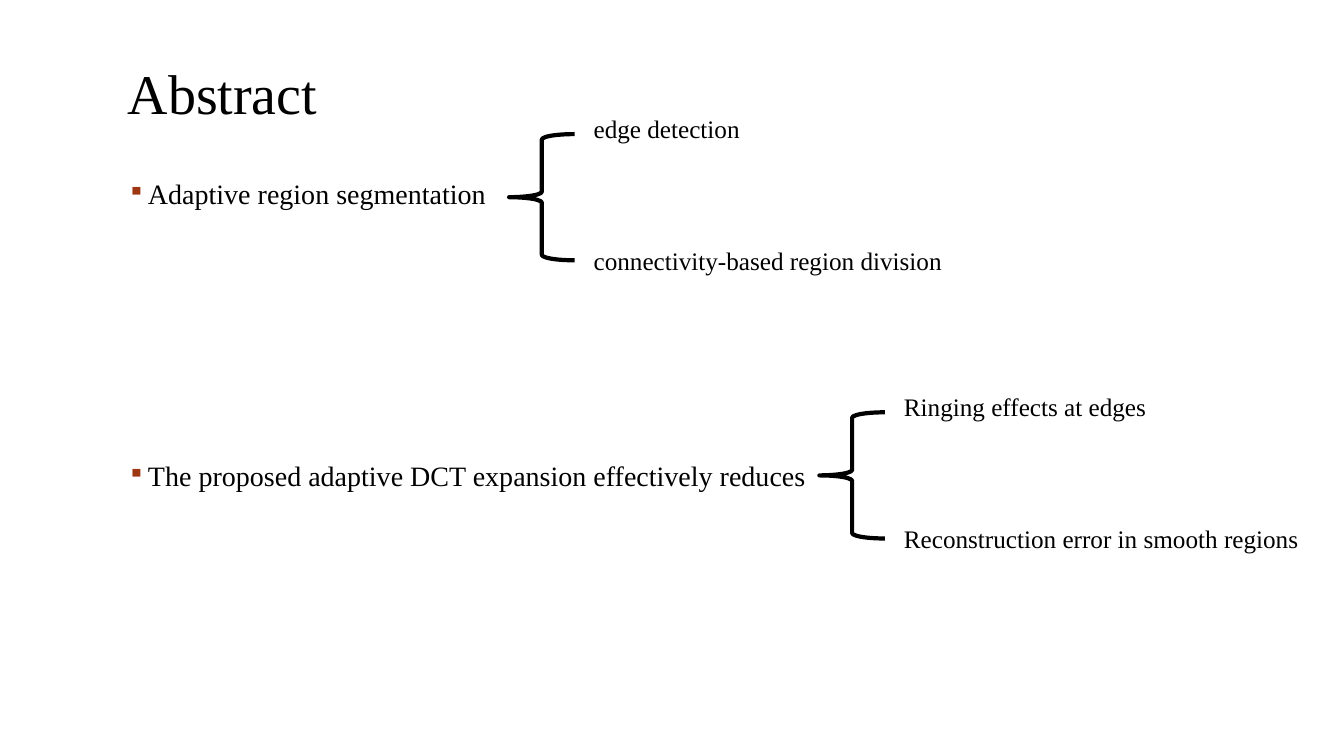
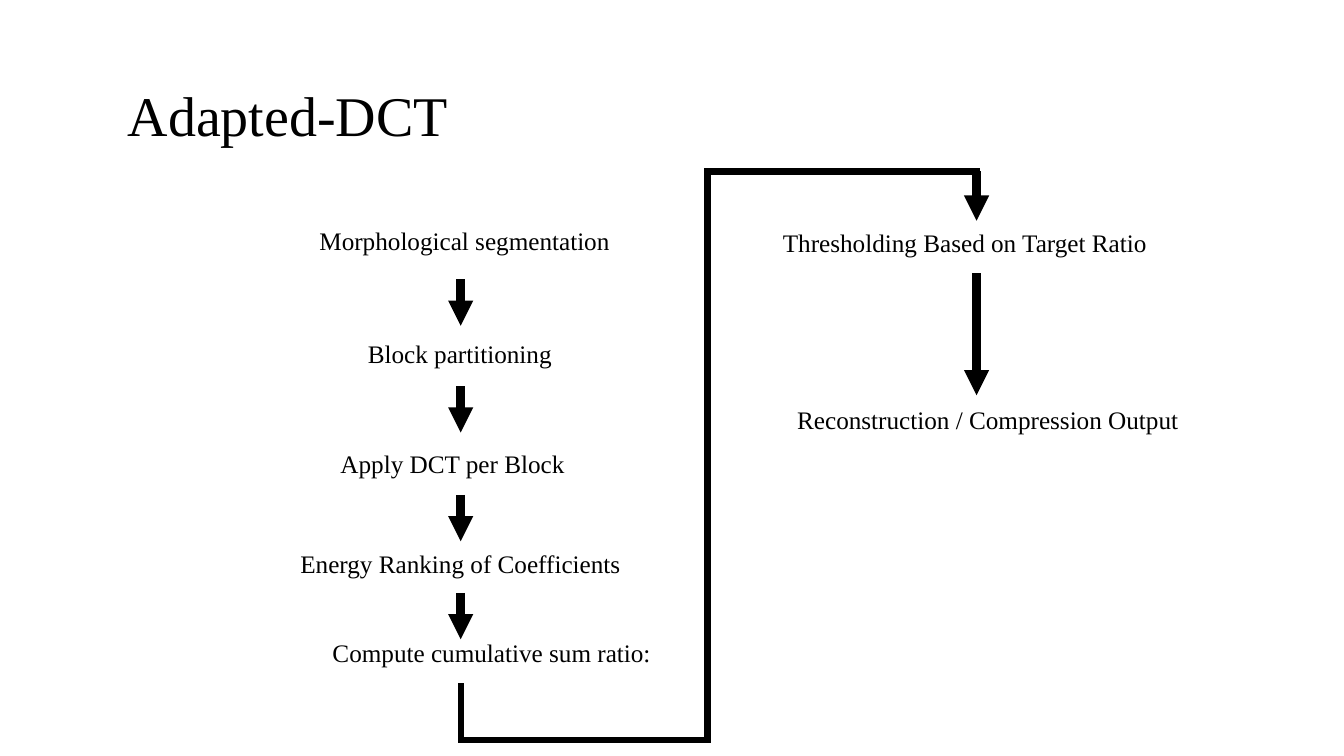
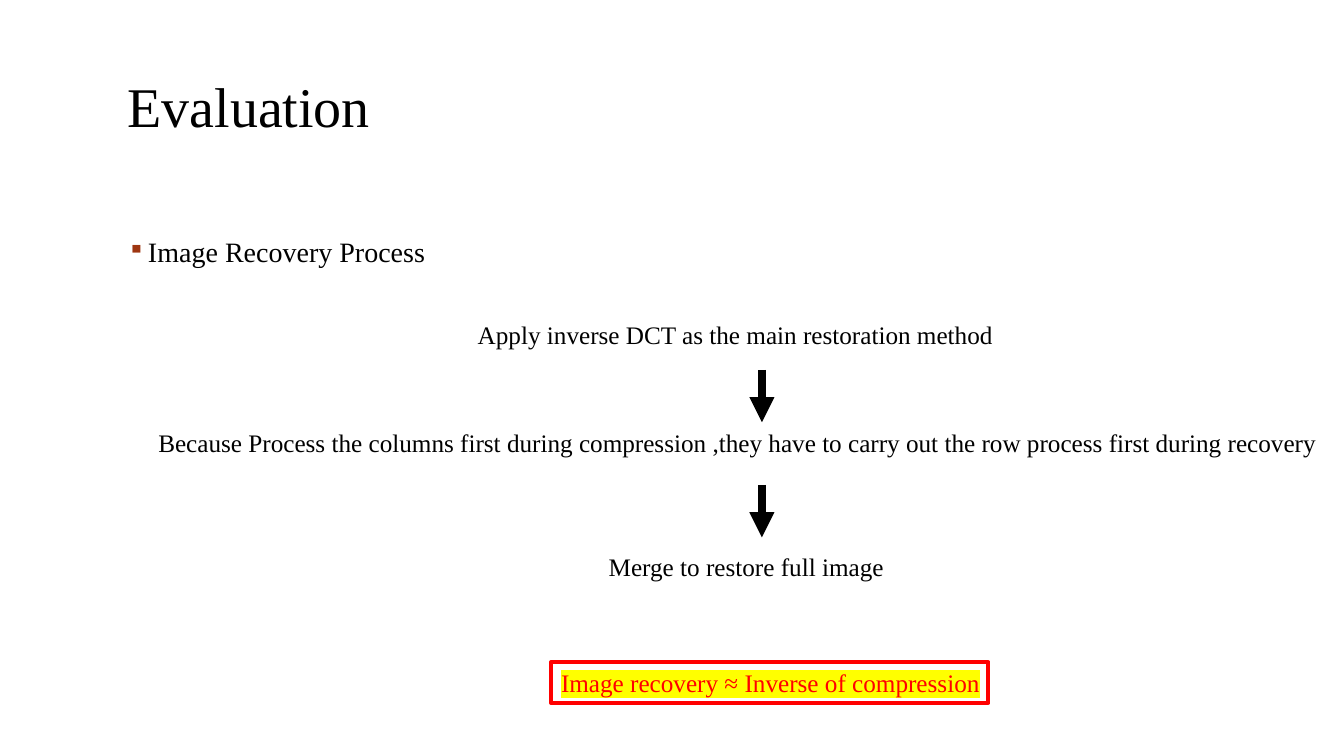
import itertools

import pptx
import pptx.dml.color
import pptx.enum.shapes
import pptx.oxml.ns
import pptx.util
from lxml import etree

Cm = pptx.util.Cm
Pt = pptx.util.Pt
qn = pptx.oxml.ns.qn

FONT = "Times New Roman"
BLACK, RUST, RED, YELLOW = "000000", "9E3611", "FF0000", "FFFF00"
MARGIN = 2.97
LABEL_HEIGHT = 1.02


def color(hex_string):
    return pptx.dml.color.RGBColor.from_string(hex_string)


def add_xml(parent, tag, **attributes):
    return etree.SubElement(parent, qn(tag), attributes)


def add_slide(presentation, title, title_top):
    slide = presentation.slides.add_slide(presentation.slide_layouts[6])
    add_text(slide, title, MARGIN, title_top, 26, 1.96, size=40)
    return slide


def add_text(slide, text, left, top, width=10.8, height=LABEL_HEIGHT, size=18, ink=BLACK):
    box = slide.shapes.add_textbox(Cm(left), Cm(top), Cm(width), Cm(height))
    box.text_frame.word_wrap = True
    run = box.text_frame.paragraphs[0].add_run()
    run.text = text
    run.font.size = Pt(size)
    run.font.name = FONT
    run.font.color.rgb = color(ink)
    return box


def add_bullet(slide, text, top):
    box = add_text(slide, text, MARGIN, top, 18, size=20)
    paragraph = box.text_frame.paragraphs[0]
    paragraph.line_spacing = 0.9
    properties = paragraph._p.get_or_add_pPr()
    properties.set("marL", str(Cm(0.51)))
    properties.set("indent", str(Cm(-0.51)))
    add_xml(add_xml(properties, "a:buClr"), "a:srgbClr", val=RUST)
    add_xml(properties, "a:buSzPct", val="85000")
    add_xml(properties, "a:buChar", char="▪")


def add_line(slide, start, end, width=4.5):
    line = slide.shapes.add_connector(
        pptx.enum.shapes.MSO_CONNECTOR.STRAIGHT, *map(Cm, start + end))
    line.line.color.rgb = color(BLACK)
    line.line.width = Pt(width)
    add_xml(line._element.spPr, "a:effectLst")
    return line.line._get_or_add_ln()


def add_down_arrow(slide, x, top, length):
    outline = add_line(slide, (x, top), (x, top + length), 6)
    add_xml(outline, "a:tailEnd", type="triangle")


def add_elbow_line(slide, points):
    """Join the points with straight lines whose square caps fill the corners."""
    for start, end in itertools.pairwise(points):
        add_line(slide, start, end).set("cap", "sq")


def add_branch(slide, left, top, upper, lower):
    """Draw a left brace with a label at each of its two tips."""
    brace = slide.shapes.add_shape(
        pptx.enum.shapes.MSO_SHAPE.LEFT_BRACE, Cm(left), Cm(top), Cm(1.65), Cm(3.18))
    brace.shadow.inherit = False
    brace.fill.background()
    brace.line.color.rgb = color(BLACK)
    brace.line.width = Pt(3)
    add_text(slide, upper, left + 1.88, top - 0.66)
    add_text(slide, lower, left + 1.88, top + 2.67)


def add_conclusion(slide, text, left, top):
    """Draw highlighted text in a red frame."""
    box = add_text(slide, text, left, top, 11.02, ink=RED)
    box.line.color.rgb = color(RED)
    box.line.width = Pt(3)
    box.text_frame.margin_right = 0
    properties = box.text_frame.paragraphs[0].runs[0]._r.get_or_add_rPr()
    highlight = etree.Element(qn("a:highlight"))
    add_xml(highlight, "a:srgbClr", val=YELLOW)
    properties.find(qn("a:solidFill")).addnext(highlight)


def build_abstract(presentation):
    slide = add_slide(presentation, "Abstract", 1.35)
    add_bullet(slide, "Adaptive region segmentation", 4.42)
    add_branch(slide, 12.83, 3.38, "edge detection", "connectivity-based region division")
    add_bullet(slide, "The proposed adaptive DCT expansion effectively reduces", 11.53)
    add_branch(slide, 20.65, 10.39, "Ringing effects at edges",
               "Reconstruction error in smooth regions")


def build_adapted_dct(presentation):
    slide = add_slide(presentation, "Adapted-DCT", 1.9)
    steps = [
        ("Morphological segmentation", 7.8, 5.56),
        ("Block partitioning", 9.02, 8.41),
        ("Apply DCT per Block", 8.33, 11.18),
        ("Energy Ranking of Coefficients", 7.32, 13.69),
        ("Compute cumulative sum ratio:", 8.13, 15.93),
        ("Thresholding Based on Target Ratio", 19.48, 5.61),
        ("Reconstruction / Compression Output", 19.84, 10.06),
    ]
    for text, left, top in steps:
        add_text(slide, text, left, top)

    first_x, middle_x, second_x = 11.61, 17.83, 24.61
    upper_y, lower_y = 4.32, 18.64
    for top in (7.04, 9.73, 12.47, 14.94):
        add_down_arrow(slide, first_x, top, 1.17)
    add_elbow_line(slide, [(first_x, 17.28), (first_x, lower_y), (middle_x, lower_y),
                           (middle_x, upper_y), (second_x, upper_y)])
    add_down_arrow(slide, second_x, upper_y, 1.24)
    add_down_arrow(slide, second_x, 6.88, 3.08)


def build_evaluation(presentation):
    slide = add_slide(presentation, "Evaluation", 1.68)
    add_bullet(slide, "Image Recovery Process", 5.89)
    add_text(slide, "Apply inverse DCT as the main restoration method", 11.79, 7.93, 15)
    add_text(slide, "Because Process the columns first during compression ,they have to carry out "
             "the row process first during recovery", 3.74, 10.64, 30.1)
    add_text(slide, "Merge to restore full image", 15.09, 13.77)
    for top in (9.32, 12.22):
        add_down_arrow(slide, 19.2, top, 1.32)
    add_conclusion(slide, "Image recovery ≈ Inverse of compression", 13.89, 16.69)


def main():
    presentation = pptx.Presentation()
    presentation.slide_width = Cm(33.87)
    presentation.slide_height = Cm(19.05)
    build_abstract(presentation)
    build_adapted_dct(presentation)
    build_evaluation(presentation)
    presentation.save("out.pptx")


if __name__ == "__main__":
    main()
